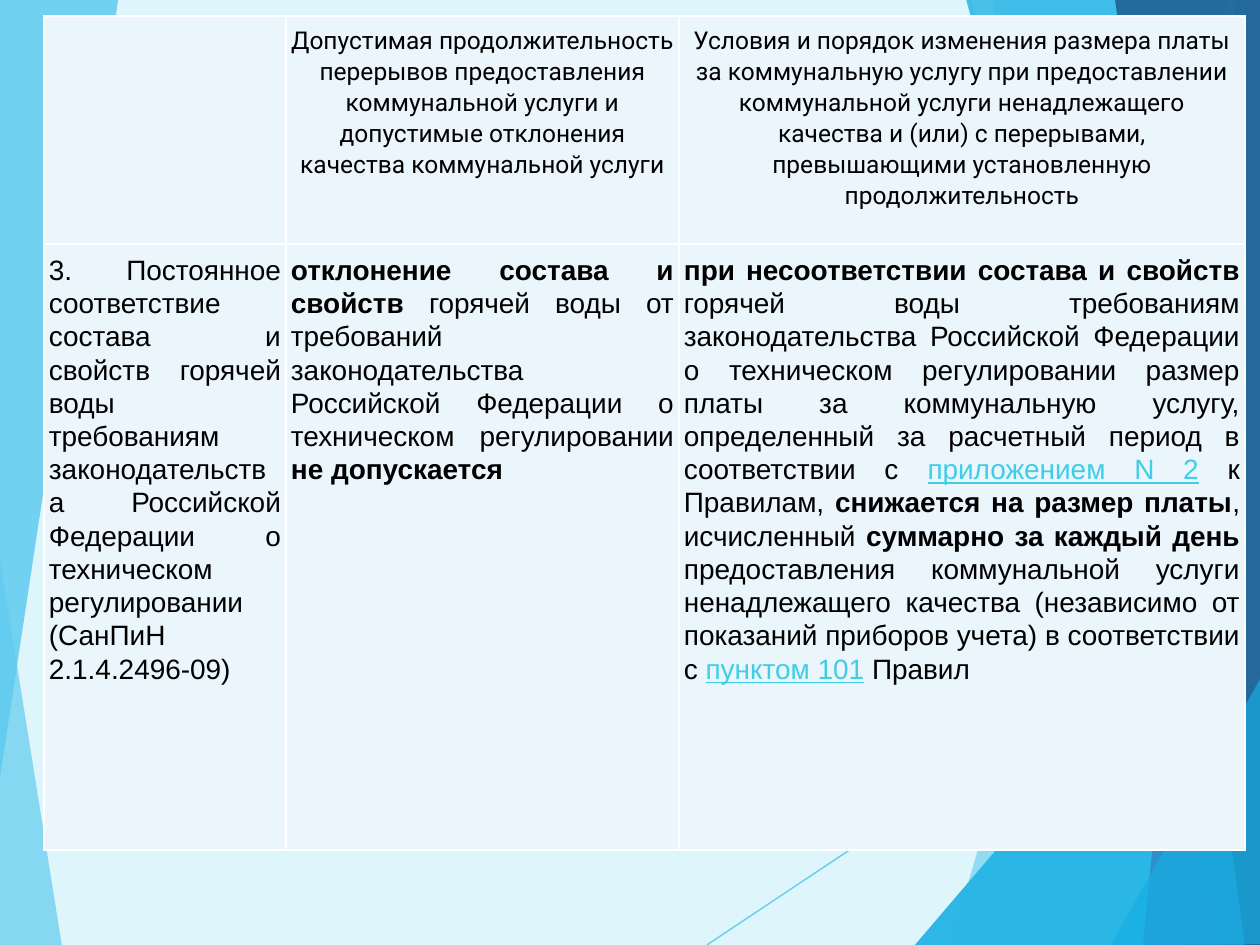
from dataclasses import dataclass
from lxml.etree import SubElement
from pptx import Presentation
from pptx.dml.color import RGBColor
from pptx.enum.shapes import MSO_CONNECTOR
from pptx.enum.text import PP_ALIGN
from pptx.oxml import parse_xml
from pptx.oxml.ns import nsdecls, qn
from pptx.util import Pt

PX = 7257  # EMU in one px, at 126 px to the inch


@dataclass(frozen=True)
class Theme:
    backdrop: str = "DFF5FC"
    sky: str = "5FCBEF"
    cyan: str = "17B0E4"
    blue: str = "2E83C3"
    navy: str = "226292"
    cell: str = "EAF6FC"
    border: str = "FFFFFF"
    text: str = "000000"
    link: str = "3FCDE7"
    head_font: str = "Roboto"
    head_size: int = 14
    body_font: str = "Arial"
    body_size: int = 16
    hairline: float = 0.75


THEME = Theme()

# Facets: colour, opacity in percent, corners in px
LOWER_LEFT = (THEME.sky, 70, [(-1, 553), (62, 946), (-1, 945)])
UPPER_LEFT = (THEME.sky, 85, [(-1, 0), (118, -1), (118, 1), (-1, 784)])
RIGHT_FACETS = [
    (THEME.sky, 36, [(1228, 0), (950, 945), (1263, 946), (1261, 1)]),
    (THEME.sky, 20, [(993, -1), (1158, 945), (1261, 945), (1261, -1)]),
    (THEME.cyan, 66, [(915, 945), (1260, 541), (1261, 945)]),
    (THEME.cyan, 50, [(966, -1), (1222, 945), (1261, 944), (1261, -1)]),
    (THEME.blue, 70, [(1236, -1), (1143, 945), (1261, 945), (1260, -1)]),
    (THEME.navy, 82, [(1115, -1), (1245, 945), (1263, 945), (1260, -1)]),
    (THEME.cyan, 66, [(1111, 945), (1263, 674), (1263, 944)]),
]
RIGHT_LINES = [(707, 945, 1261, 576), (970, 0, 1139, 945)]

# Table: each cell is a list of (text, style) spans
COLUMNS = [242, 393, 566]
ROWS = [228, 606]
HEADER = [
    [],
    [("Допустимая продолжительность перерывов предоставления коммунальной "
      "услуги и допустимые отклонения качества коммунальной услуги", "plain")],
    [("Условия и порядок изменения размера платы за коммунальную услугу при "
      "предоставлении коммунальной услуги ненадлежащего качества и (или) с "
      "перерывами, превышающими установленную продолжительность", "plain")],
]
BODY = [
    [("3. Постоянное соответствие состава и свойств горячей воды требованиям "
      "законодательства Российской Федерации о техническом регулировании "
      "(СанПиН 2.1.4.2496-09)", "plain")],
    [("отклонение состава и свойств ", "bold"),
     ("горячей воды от требований законодательства Российской Федерации о "
      "техническом регулировании ", "plain"),
     ("не допускается", "bold")],
    [("при несоответствии состава и свойств ", "bold"),
     ("горячей воды требованиям законодательства Российской Федерации о "
      "техническом регулировании размер платы за коммунальную услугу, "
      "определенный за расчетный период в соответствии с ", "plain"),
     ("приложением N 2", "link"),
     (" к Правилам, ", "plain"),
     ("снижается на размер платы", "bold"),
     (", исчисленный ", "plain"),
     ("суммарно за каждый день ", "bold"),
     ("предоставления коммунальной услуги ненадлежащего качества (независимо "
      "от показаний приборов учета) в соответствии с ", "plain"),
     ("пунктом 101", "link"),
     (" Правил", "plain")],
]


def paint(fill, color, opacity=100):
    fill.solid()
    fill.fore_color.rgb = RGBColor.from_string(color)
    if opacity < 100:
        tone = fill._xPr.find(f".//{qn('a:srgbClr')}")
        SubElement(tone, qn("a:alpha"), val=str(opacity * 1000))


def add_facet(page, box, color, opacity, corners):
    left, top = box
    points = [(left + x, top + y) for x, y in corners]
    builder = page.shapes.build_freeform(*points[0], scale=PX)
    builder.add_line_segments(points[1:], close=True)
    facet = builder.convert_to_shape()
    facet.shadow.inherit = False
    paint(facet.fill, color, opacity)
    facet.line.fill.background()


def add_hairline(page, box, x1, y1, x2, y2):
    left, top = box
    ends = [(left + x1) * PX, (top + y1) * PX, (left + x2) * PX, (top + y2) * PX]
    line = page.shapes.add_connector(MSO_CONNECTOR.STRAIGHT, *ends)
    line.line.width = Pt(THEME.hairline)
    paint(line.line.fill, THEME.sky, 70)
    SubElement(line._element.spPr, qn("a:effectLst"))


def add_backdrop(page, box):
    paint(page.background.fill, THEME.backdrop)
    add_facet(page, box, *LOWER_LEFT)
    # The right-hand facets lie in two layers, which deepens their colour
    for _ in range(2):
        for ends in RIGHT_LINES:
            add_hairline(page, box, *ends)
        for facet in RIGHT_FACETS:
            add_facet(page, box, *facet)
    add_facet(page, box, *UPPER_LEFT)


def format_cell(cell):
    cell.margin_left = cell.margin_right = 5 * PX
    cell.margin_top = cell.margin_bottom = 9 * PX
    paint(cell.fill, THEME.cell)
    properties = cell._tc.get_or_add_tcPr()
    for index, side in enumerate(("lnL", "lnR", "lnT", "lnB")):
        properties.insert(index, parse_xml(
            f'<a:{side} {nsdecls("a")} w="{Pt(1)}"><a:solidFill>'
            f'<a:srgbClr val="{THEME.border}"/></a:solidFill></a:{side}>'))


def write_cell(cell, spans, font_name, size, alignment):
    para = cell.text_frame.paragraphs[0]
    para.alignment = alignment
    para.line_spacing = 1.07
    for text, style in spans:
        span = para.add_run()
        span.text = text
        span.font.bold = style == "bold"
        span.font.underline = style == "link"
        paint(span.font.fill, THEME.link if style == "link" else THEME.text)
    for font in [para.font] + [span.font for span in para.runs]:
        font.name = font_name
        font.size = Pt(size)


def add_service_table(page, box):
    left, top = box
    frame = page.shapes.add_table(len(ROWS), len(COLUMNS), left * PX, top * PX,
                                  sum(COLUMNS) * PX, sum(ROWS) * PX)
    table = frame.table
    table.first_row = table.horz_banding = False
    for column, width in zip(table.columns, COLUMNS):
        column.width = width * PX
    for row, height in zip(table.rows, ROWS):
        row.height = height * PX
    looks = [
        (HEADER, THEME.head_font, THEME.head_size, PP_ALIGN.CENTER),
        (BODY, THEME.body_font, THEME.body_size, PP_ALIGN.JUSTIFY),
    ]
    for row, (texts, *look) in zip(table.rows, looks):
        for cell, spans in zip(row.cells, texts):
            format_cell(cell)
            write_cell(cell, spans, *look)


def main():
    deck = Presentation()
    deck.slide_width, deck.slide_height = 1260 * PX, 945 * PX
    page = deck.slides.add_slide(deck.slide_layouts[6])
    add_backdrop(page, (0, 0))
    add_service_table(page, (44, 16))
    deck.save("out.pptx")


if __name__ == "__main__":
    main()
